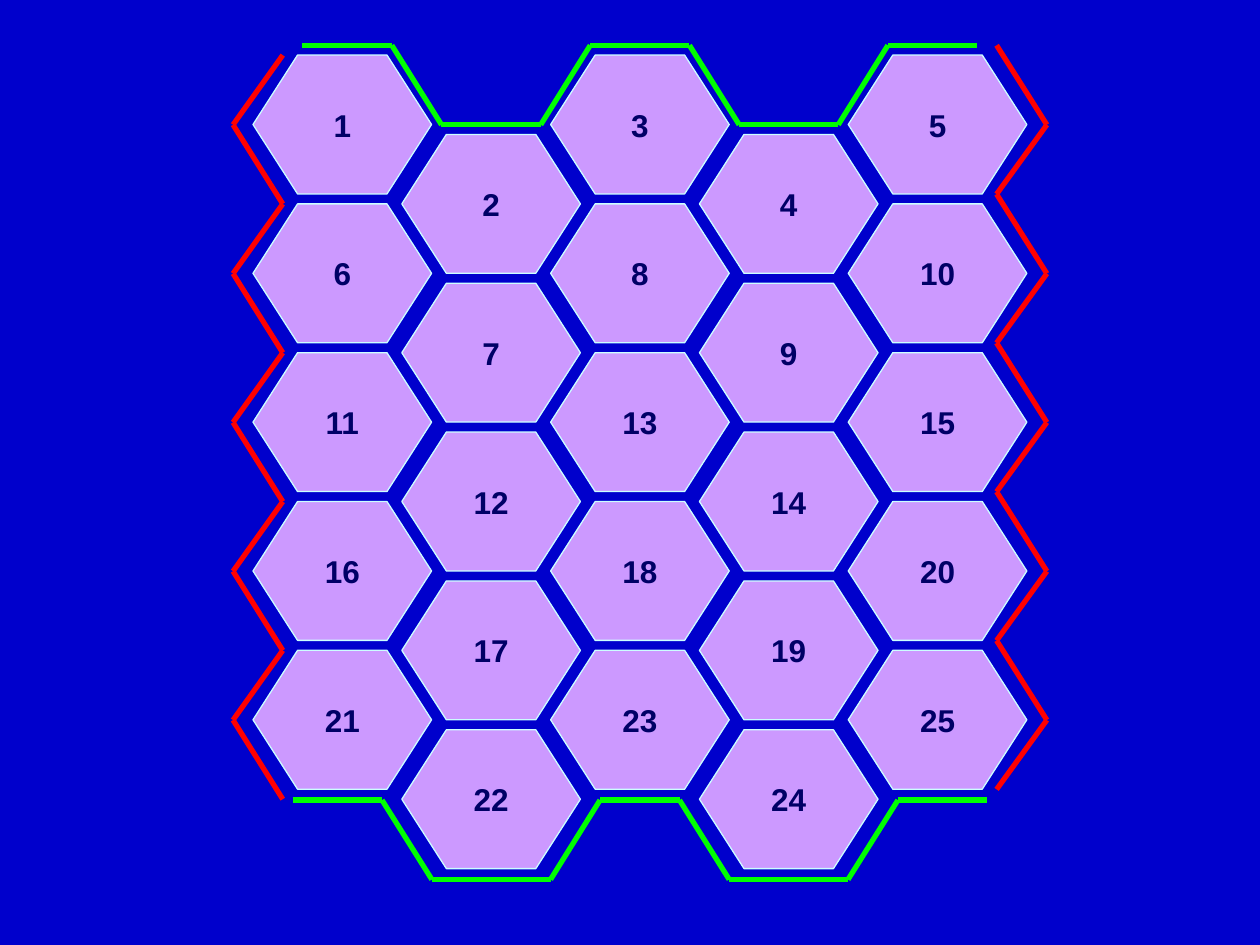
from itertools import pairwise

from lxml import etree
from pptx import Presentation
from pptx.dml.color import RGBColor
from pptx.enum import shapes, text
from pptx.oxml import ns
from pptx.util import Pt

BLUE = RGBColor(0x00, 0x00, 0xCC)
LILAC = RGBColor(0xCC, 0x99, 0xFF)
PALE = RGBColor(0xCC, 0xFF, 0xFF)
NAVY = RGBColor(0x00, 0x00, 0x66)
RED = RGBColor(0xFF, 0x00, 0x00)
GREEN = RGBColor(0x00, 0xFF, 0x00)

# Board: numbered row by row, every second column shifted down
ROWS = COLUMNS = 5
LEFT, TOP = 144.6, 31.5
PITCH, SHIFT = 85.04, 45.36
CELL_WIDTH, CELL_HEIGHT = 102.05, 79.37

# Side borders: notch x, tip x, first notch y
SIDES = [(161.6, 133.2, 31.5), (569.5, 598.2, 25.9)]
FIRST_TIP = 71.3

# Top and bottom borders: outer y, inner y, corner x positions
EDGES = [
    (25.9, 71.3, [172.8, 223.9, 252.3, 309, 337.3, 394, 422.4, 479, 507.4, 558.5]),
    (457.2, 502.6, [167.2, 218.3, 246.8, 314.6, 342.9, 388.3, 416.7, 484.6, 513.1, 564.2]),
]


def write(box, content, size, color, bold=False, font="Arial"):
    frame = box.text_frame
    frame.word_wrap = False
    frame.vertical_anchor = text.MSO_ANCHOR.MIDDLE
    para = frame.paragraphs[0]
    para.alignment = text.PP_ALIGN.CENTER
    span = para.add_run()
    span.text = content
    span.font.name, span.font.size, span.font.bold = font, Pt(size), bold
    span.font.color.rgb = color


def draw_cell(page, number, left, top):
    cell = page.shapes.add_shape(
        shapes.MSO_SHAPE.HEXAGON, Pt(left), Pt(top), Pt(CELL_WIDTH), Pt(CELL_HEIGHT))
    cell.adjustments[0] = 0.321
    cell.shadow.inherit = False
    cell.fill.solid()
    cell.fill.fore_color.rgb = LILAC
    cell.line.color.rgb = PALE
    cell.line.width = Pt(0.75)
    write(cell, str(number), size=18, color=NAVY, bold=True)


def draw_border(page, points, color):
    for (x1, y1), (x2, y2) in pairwise(points):
        line = page.shapes.add_connector(
            shapes.MSO_CONNECTOR.STRAIGHT, Pt(x1), Pt(y1), Pt(x2), Pt(y2))
        line.line.color.rgb = color
        line.line.width = Pt(3)
        etree.SubElement(line._element.spPr, ns.qn("a:effectLst"))


def main():
    deck = Presentation()
    deck.slide_width, deck.slide_height = Pt(720), Pt(540)
    page = deck.slides.add_slide(deck.slide_layouts[6])
    page.background.fill.solid()
    page.background.fill.fore_color.rgb = BLUE

    # Hexagonal cells
    for column in range(COLUMNS):
        for row in range(ROWS):
            draw_cell(page, row * COLUMNS + column + 1,
                      LEFT + column * PITCH,
                      TOP + row * PITCH + column % 2 * SHIFT)

    # Red zigzags left and right
    for notch_x, tip_x, first_notch in SIDES:
        points = [(notch_x, first_notch)]
        for row in range(ROWS):
            points += [(tip_x, FIRST_TIP + row * PITCH),
                       (notch_x, first_notch + (row + 1) * PITCH)]
        draw_border(page, points, RED)

    # Green edges: corners come in pairs that alternate between two heights
    for outer_y, inner_y, corners in EDGES:
        points = [(x, inner_y if index // 2 % 2 else outer_y)
                  for index, x in enumerate(corners)]
        draw_border(page, points, GREEN)

    deck.save("out.pptx")


if __name__ == "__main__":
    main()
